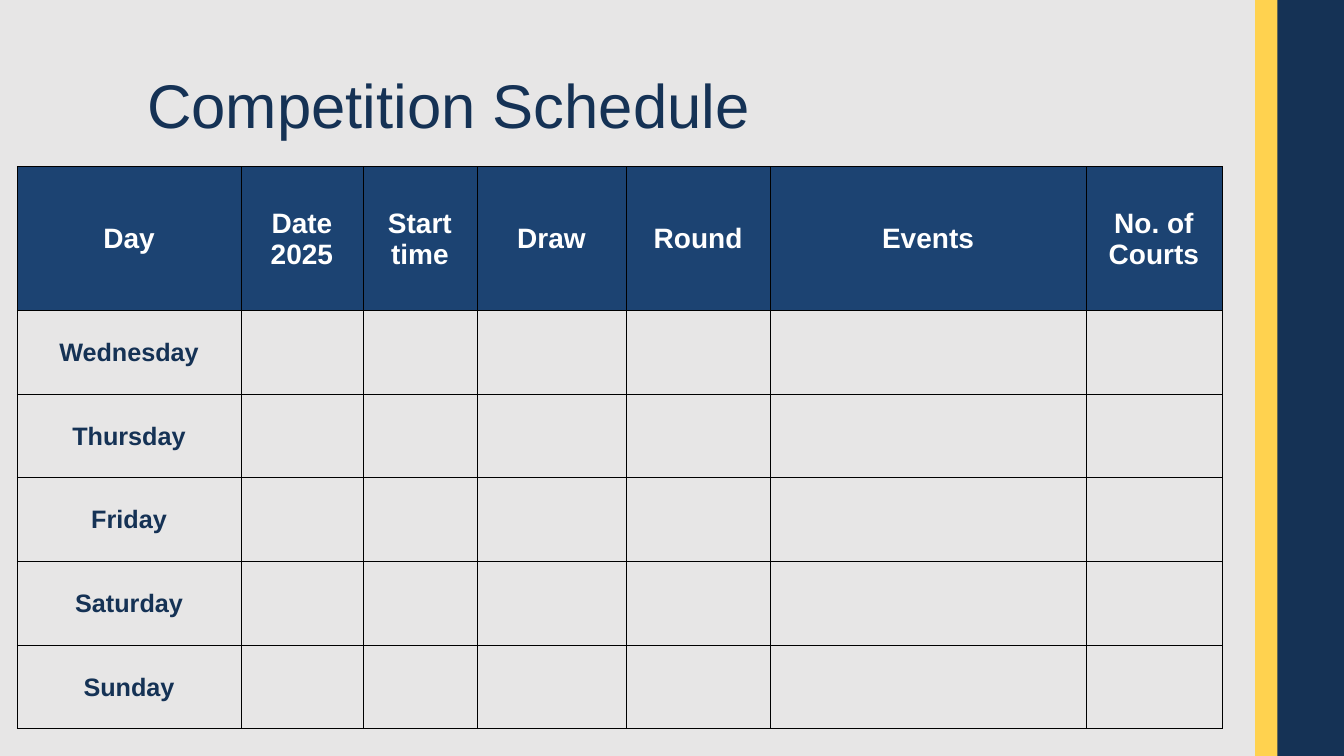
from lxml.etree import SubElement
from pptx import Presentation
from pptx.dml.color import RGBColor
from pptx.enum.shapes import MSO_SHAPE
from pptx.enum.text import MSO_ANCHOR, MSO_AUTO_SIZE, PP_ALIGN
from pptx.oxml.ns import qn
from pptx.util import Inches, Pt

TITLE = "Competition Schedule"
COLUMNS = [  # heading, width
    ("Day", 2.22),
    ("Date\n2025", 1.21),
    ("Start time", 1.13),
    ("Draw", 1.48),
    ("Round", 1.43),
    ("Events", 3.13),
    ("No. of Courts", 1.35),
]
DAYS = ["Wednesday", "Thursday", "Friday", "Saturday", "Sunday"]

NAVY = RGBColor(0x15, 0x32, 0x55)
BLUE = RGBColor(0x1C, 0x43, 0x72)
YELLOW = RGBColor(0xFF, 0xD2, 0x4F)
GREY = RGBColor(0xE7, 0xE6, 0xE6)
WHITE = RGBColor(0xFF, 0xFF, 0xFF)
BLACK = RGBColor(0, 0, 0)

SLIDE_W, SLIDE_H = 13.33, 7.5
BARS = [(12.45, YELLOW), (12.67, NAVY)]  # left, colour
BARS_RIGHT = 14.52  # the bars bleed past the slide edge
TABLE_LEFT, TABLE_TOP = 0.17, 1.65
HEADER_H, ROW_H = 1.43, 0.83
MARGINS = {"margin_left": 0.01, "margin_right": 0.01,
           "margin_top": 0.01, "margin_bottom": 0}
HEADER_FONT = {"name": "Arial", "size": Pt(20), "bold": True}
DAY_FONT = {"name": "Arial", "size": Pt(18), "bold": True}
TITLE_FONT = {"name": "Arial", "size": Pt(44), "bold": False}


def set_font(p, font, color):
    for name, value in font.items():
        setattr(p.font, name, value)
    p.font.color.rgb = color


def add_borders(cell):
    tcPr = cell._tc.get_or_add_tcPr()
    for side in ("lnL", "lnR", "lnT", "lnB"):
        ln = SubElement(tcPr, qn(f"a:{side}"), w=str(Pt(0.5)))
        fill = SubElement(ln, qn("a:solidFill"))
        SubElement(fill, qn("a:srgbClr"), val=str(BLACK))


def fill_cell(cell, text, font, color):
    cell.text = text
    cell.vertical_anchor = MSO_ANCHOR.MIDDLE
    for name, value in MARGINS.items():
        setattr(cell, name, Inches(value))
    for p in cell.text_frame.paragraphs:
        p.alignment = PP_ALIGN.CENTER
        set_font(p, font, color)


prs = Presentation()
prs.slide_width, prs.slide_height = Inches(SLIDE_W), Inches(SLIDE_H)
s = prs.slides.add_slide(prs.slide_layouts[5])
s.background.fill.solid()
s.background.fill.fore_color.rgb = GREY

# The bars belong to the slide master, behind its placeholders
master_tree = prs.slide_master.shapes._spTree
for index, (left, color) in enumerate(BARS, 2):
    bar = s.shapes.add_shape(MSO_SHAPE.RECTANGLE, Inches(left), 0,
                             Inches(BARS_RIGHT - left), Inches(SLIDE_H))
    bar.shadow.inherit = False
    bar.fill.solid()
    bar.fill.fore_color.rgb = color
    bar.line.fill.background()
    master_tree.insert(index, bar._element)

title = s.shapes.title
title.left, title.top = Inches(1.36), Inches(0.35)
title.width, title.height = Inches(9.74), Inches(1.45)
tf = title.text_frame
tf.text = TITLE
tf.word_wrap = True
tf.auto_size = MSO_AUTO_SIZE.NONE
tf.vertical_anchor = MSO_ANCHOR.MIDDLE
p = tf.paragraphs[0]
p.alignment = PP_ALIGN.LEFT
p.line_spacing = 0.9
set_font(p, TITLE_FONT, NAVY)

heights = [HEADER_H] + [ROW_H] * len(DAYS)
table = s.shapes.add_table(
    len(heights), len(COLUMNS), Inches(TABLE_LEFT), Inches(TABLE_TOP),
    Inches(sum(width for _, width in COLUMNS)), Inches(sum(heights))).table
table.first_row = table.horz_banding = False
for row, height in zip(table.rows, heights):
    row.height = Inches(height)
for cell in table.iter_cells():
    add_borders(cell)
    cell.fill.background()
for c, (heading, width) in enumerate(COLUMNS):
    table.columns[c].width = Inches(width)
    cell = table.cell(0, c)
    fill_cell(cell, heading, HEADER_FONT, WHITE)
    cell.fill.solid()
    cell.fill.fore_color.rgb = BLUE
for r, day in enumerate(DAYS, 1):
    fill_cell(table.cell(r, 0), day, DAY_FONT, NAVY)

prs.save("out.pptx")
